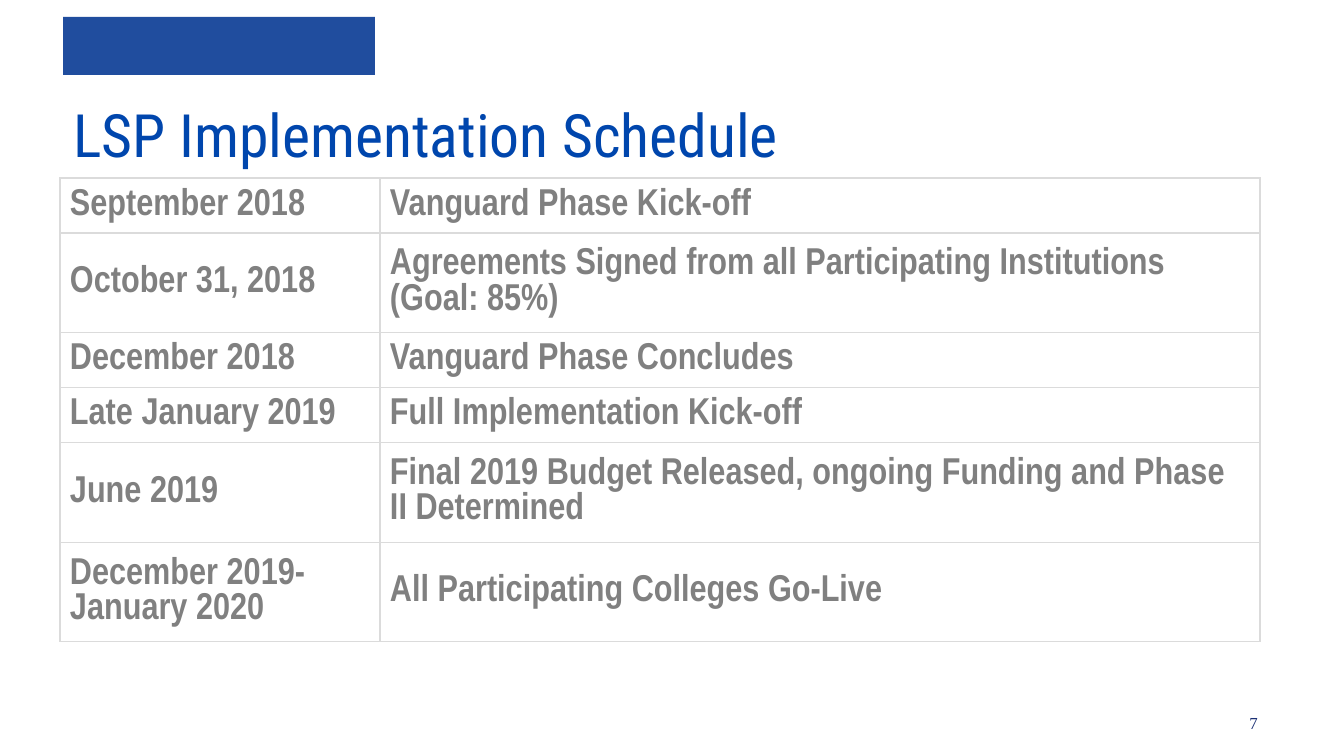
"""Build the LSP implementation schedule slide."""
from dataclasses import dataclass

from lxml.etree import SubElement
from pptx import Presentation
from pptx.dml.color import RGBColor
from pptx.enum.shapes import MSO_SHAPE
from pptx.enum.text import MSO_ANCHOR, PP_ALIGN
from pptx.oxml.ns import qn
from pptx.util import Emu, Pt

GRAY, RULE = "808080", "DBDBDB"


@dataclass
class Label:
    text: str
    box: tuple[int, int, int, int]
    font: str
    size: int
    color: str
    align: PP_ALIGN = PP_ALIGN.LEFT


@dataclass
class Phase:
    date: str
    event: str
    height: int = 55


LABELS = [
    Label("7", (1071, 706, 200, 34), "Times New Roman", 9, "1B3075", PP_ALIGN.RIGHT),
    Label("LSP Implementation Schedule", (60, 91, 1216, 86), "Roboto Condensed", 32, "0046AD"),
]
PHASES = [
    Phase("September 2018", "Vanguard Phase Kick-off"),
    Phase("October 31, 2018", "Agreements Signed from all Participating Institutions (Goal: 85%)", 99),
    Phase("December 2018", "Vanguard Phase Concludes"),
    Phase("Late January 2019", "Full Implementation Kick-off"),
    Phase("June 2019", "Final 2019 Budget Released, ongoing Funding and Phase II Determined", 99),
    Phase("December 2019-January 2020", "All Participating Colleges Go-Live", 99),
]


def px(n: int) -> Emu:
    """Turn pixels into EMU."""
    return Emu(n * 6804)


def tint(code: str) -> RGBColor:
    """Turn a hex string into a colour."""
    return RGBColor.from_string(code)


def style(para, font: str, size: int, color: str, bold: bool = False) -> None:
    """Set the font of a paragraph."""
    para.font.name, para.font.size, para.font.bold = font, Pt(size), bold
    para.font.color.rgb = tint(color)


def write(slide, label: Label) -> None:
    """Draw one text box."""
    frame = slide.shapes.add_textbox(*map(px, label.box)).text_frame
    frame.word_wrap = True
    para = frame.paragraphs[0]
    para.text, para.alignment = label.text, label.align
    style(para, label.font, label.size, label.color)


def edge(cell) -> None:
    """Draw thin rules on all sides of a cell."""
    props = cell._tc.get_or_add_tcPr()
    for i, side in enumerate(("a:lnL", "a:lnR", "a:lnT", "a:lnB")):
        line = SubElement(props, qn(side), w=str(Pt(0.75)))
        fill = SubElement(line, qn("a:solidFill"))
        SubElement(fill, qn("a:srgbClr"), val=RULE)
        props.insert(i, line)


def fill_cell(cell, text: str) -> None:
    """Write and style one table cell."""
    cell.fill.background()
    edge(cell)
    cell.vertical_anchor = MSO_ANCHOR.MIDDLE
    cell.margin_left = cell.margin_right = px(10)
    cell.margin_top = cell.margin_bottom = px(5)
    para = cell.text_frame.paragraphs[0]
    para.text = text
    style(para, "Arial Narrow", 20, GRAY, True)


def add_plan(slide, phases: list[Phase]) -> None:
    """Draw the schedule table."""
    widths = (320, 880)
    high = sum(phase.height for phase in phases)
    box = map(px, (60, 178, sum(widths), high))
    table = slide.shapes.add_table(len(phases), len(widths), *box).table
    table.first_row = table.horz_banding = False
    for col, width in zip(table.columns, widths):
        col.width = px(width)
    for row, phase in zip(table.rows, phases):
        row.height = px(phase.height)
        for cell, text in zip(row.cells, (phase.date, phase.event)):
            fill_cell(cell, text)


def main() -> None:
    """Build and save the slide."""
    deck = Presentation()
    deck.slide_width, deck.slide_height = px(1344), px(756)
    slide = deck.slides.add_slide(deck.slide_layouts[6])
    bar = slide.shapes.add_shape(MSO_SHAPE.RECTANGLE, *map(px, (63, 17, 312, 58)))
    bar.shadow.inherit = False
    bar.fill.solid()
    bar.fill.fore_color.rgb = tint("204D9E")
    bar.line.fill.background()
    for label in LABELS:
        write(slide, label)
    add_plan(slide, PHASES)
    deck.save("out.pptx")


if __name__ == "__main__":
    main()
